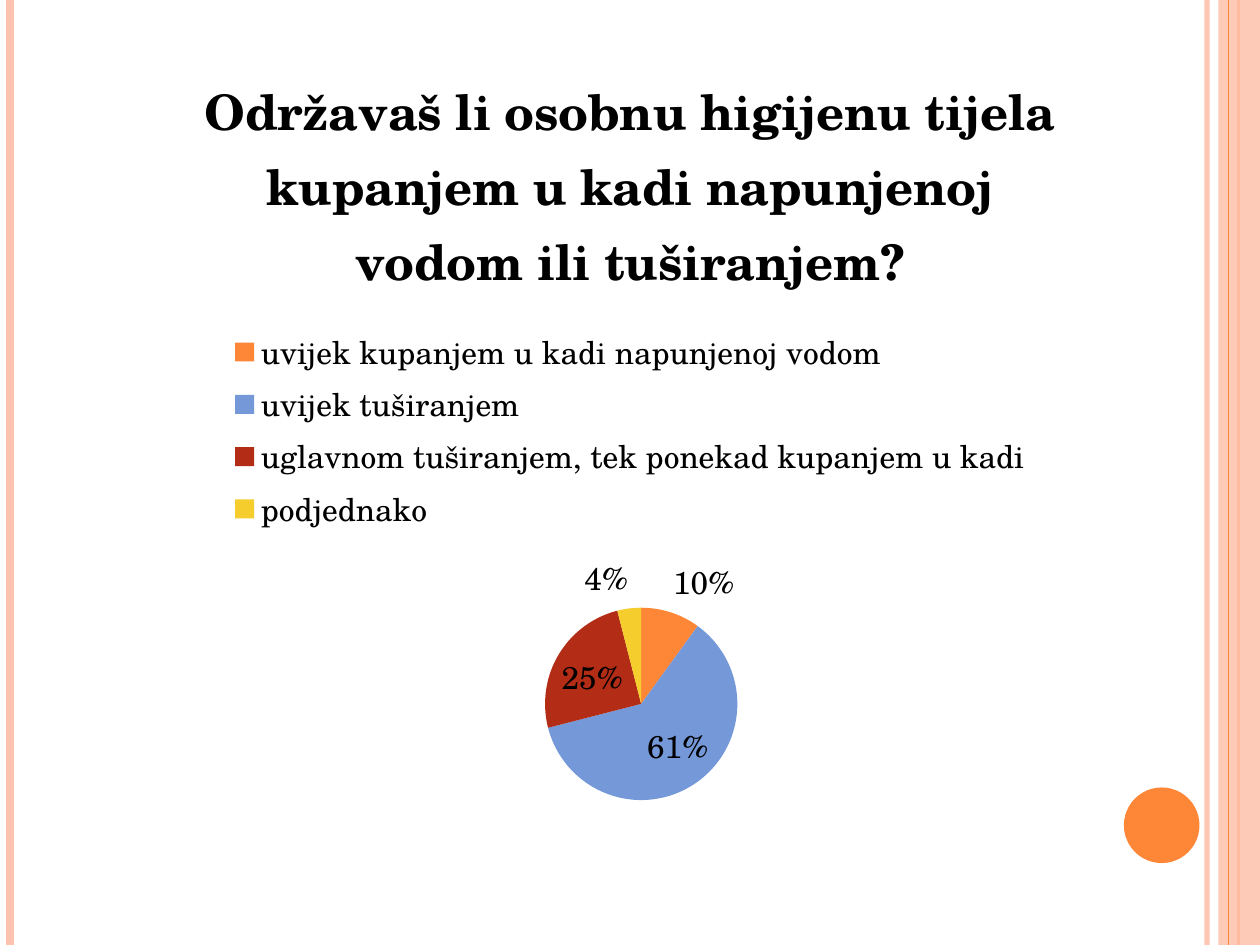
from pptx import Presentation
from pptx import util as u
from pptx.chart.data import CategoryChartData
from pptx.dml.color import RGBColor
from pptx.enum import chart as ch, shapes
from pptx.oxml import parse_xml
from pptx.oxml.ns import nsdecls, qn
from lxml import etree

WIDE, HIGH = 10, 7.5
PEACH = RGBColor(0xFE, 0xC3, 0xAE)
ORANGE = RGBColor(0xFE, 0x86, 0x37)
BLUE = RGBColor(0x75, 0x98, 0xD9)
RED = RGBColor(0xB3, 0x2C, 0x16)
YELLOW = RGBColor(0xF5, 0xCD, 0x2D)
BLACK = RGBColor(0, 0, 0)
FONT = "TeX Gyre Schola"

TITLE = ("Održavaš li osobnu higijenu tijela kupanjem u kadi napunjenoj "
         "vodom ili tuširanjem?")
ANSWERS = [
    ("uvijek kupanjem u kadi napunjenoj vodom", 10, ORANGE),
    ("uvijek tuširanjem", 61, BLUE),
    ("uglavnom tuširanjem, tek ponekad kupanjem u kadi", 25, RED),
    ("podjednako", 4, YELLOW),
]


def style(item, **values):
    for name, value in values.items():
        setattr(item, name, value)


def fade(shape, share):
    """Set the opacity, in percent, of the shape's first colour."""
    color = next(shape._element.spPr.iter(qn("a:srgbClr")))
    etree.SubElement(color, qn("a:alpha")).set("val", str(share * 1000))


def stripe(slide, x, color, width, share=100):
    line = slide.shapes.add_connector(
        shapes.MSO_CONNECTOR.STRAIGHT,
        u.Inches(x), 0, u.Inches(x), u.Inches(HIGH))
    line.line.color.rgb = color
    line.line.width = u.Pt(width)
    etree.SubElement(line._element.spPr, qn("a:effectLst"))
    if share < 100:
        fade(line, share)


def block(slide, kind, box, color, share=100):
    shape = slide.shapes.add_shape(kind, *map(u.Inches, box))
    shape.shadow.inherit = False
    shape.fill.solid()
    shape.fill.fore_color.rgb = color
    shape.line.fill.background()
    if share < 100:
        fade(shape, share)


def place(chart, mid_x, mid_y, w, h):
    """Centre the plot's inner area, in shares of the chart's size."""
    area = chart._chartSpace.chart.plotArea
    for old in area.findall(qn("c:layout")):
        area.remove(old)
    box = (mid_x - w / 2, mid_y - h / 2, w, h)
    size = "".join(f'<c:{tag} val="{val}"/>' for tag, val in zip("xywh", box))
    area.insert(0, parse_xml(
        f'<c:layout {nsdecls("c")}><c:manualLayout>'
        '<c:layoutTarget val="inner"/><c:xMode val="edge"/>'
        f'<c:yMode val="edge"/>{size}</c:manualLayout></c:layout>'))


def pie(slide, box):
    names, shares, colors = zip(*ANSWERS)
    data = CategoryChartData()
    data.categories = names
    data.add_series(TITLE, shares)
    chart = slide.shapes.add_chart(
        ch.XL_CHART_TYPE.PIE, *map(u.Inches, box), data).chart
    style(chart.font, name=FONT, size=u.Pt(18))
    chart.font.color.rgb = BLACK

    # Heading
    chart.has_title = True
    frame = chart.chart_title.text_frame
    frame.text = TITLE
    font = frame.paragraphs[0].runs[0].font
    style(font, name=FONT, size=u.Pt(28), bold=True)
    font.color.rgb = BLACK
    chart.chart_title.include_in_layout = False

    # Legend
    chart.has_legend = True
    style(chart.legend, position=ch.XL_LEGEND_POSITION.TOP,
          include_in_layout=False)
    style(chart.legend.font, name=FONT, size=u.Pt(18))

    # Slices and labels
    plot = chart.plots[0]
    plot.vary_by_categories = True
    for i, color in enumerate(colors):
        fill = plot.series[0].points[i].format.fill
        fill.solid()
        fill.fore_color.rgb = color
    plot.has_data_labels = True
    style(plot.data_labels, show_percentage=True, show_value=False,
          number_format="0%", number_format_is_linked=False,
          position=ch.XL_LABEL_POSITION.BEST_FIT)
    place(chart, 0.51, 0.81, 0.17, 0.24)


def main():
    deck = Presentation()
    style(deck, slide_width=u.Inches(WIDE), slide_height=u.Inches(HIGH))
    slide = deck.slides.add_slide(deck.slide_layouts[6])

    # Side stripes and dot
    stripe(slide, 9.58, PEACH, 3, 93)
    stripe(slide, 0.08, PEACH, 4.5)
    stripe(slide, 9.83, ORANGE, 1.5)
    block(slide, shapes.MSO_SHAPE.RECTANGLE, (9.67, 0, 0.33, HIGH), PEACH, 87)
    stripe(slide, 9.75, ORANGE, 0.75)
    block(slide, shapes.MSO_SHAPE.OVAL, (8.92, 6.25, 0.6, 0.6), ORANGE)

    # Survey result
    pie(slide, (0.51, 0.29, 8.98, 6.54))
    deck.save("out.pptx")


if __name__ == "__main__":
    main()
